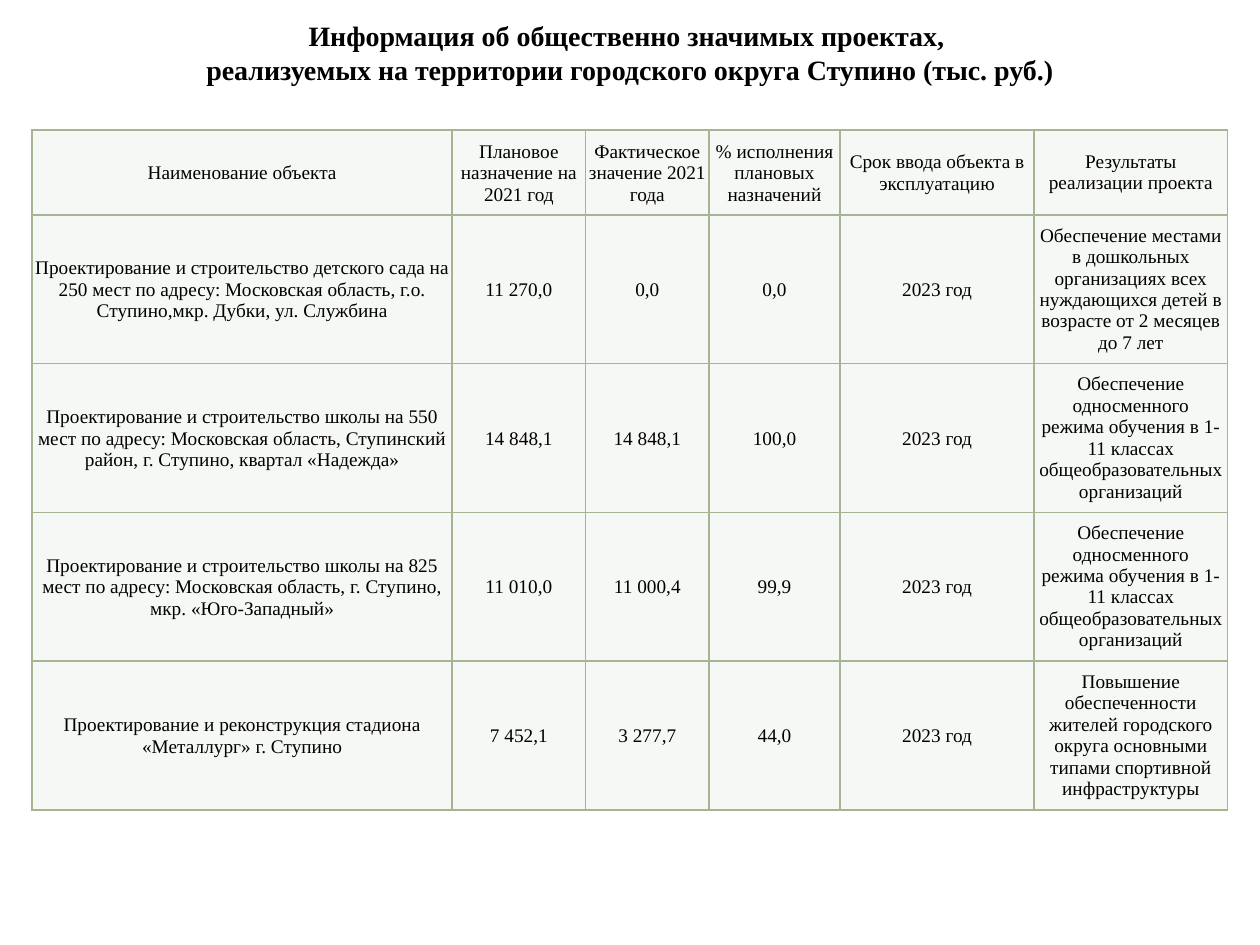
from lxml.etree import SubElement
from pptx import Presentation
from pptx.dml.color import RGBColor
from pptx.enum.text import MSO_ANCHOR as Anchor, MSO_AUTO_SIZE as AutoSize, PP_ALIGN as Align
from pptx.oxml.ns import qn
from pptx.util import Pt

FONT = "Times New Roman"
TITLE = [
    "Информация об общественно значимых проектах, ",
    "реализуемых на территории городского округа Ступино (тыс. руб.)",
]
SCHOOL_RESULT = "Обеспечение односменного режима обучения в 1-11 классах общеобразовательных организаций"
ROWS = [
    ("Наименование объекта", "Плановое назначение на 2021 год",
     "Фактическое значение 2021 года", "% исполнения плановых назначений",
     "Срок ввода объекта в эксплуатацию", "Результаты реализации проекта"),
    ("Проектирование и строительство детского сада на 250 мест по адресу: "
     "Московская область, г.о. Ступино,мкр. Дубки, ул. Службина",
     "11 270,0", "0,0", "0,0", "2023 год",
     "Обеспечение местами в дошкольных организациях всех нуждающихся детей "
     "в возрасте от 2 месяцев до 7 лет"),
    ("Проектирование и строительство школы на 550 мест по адресу: "
     "Московская область, Ступинский район, г. Ступино, квартал «Надежда»",
     "14 848,1", "14 848,1", "100,0", "2023 год", SCHOOL_RESULT),
    ("Проектирование и строительство школы на 825 мест по адресу: "
     "Московская область, г. Ступино, мкр. «Юго-Западный»",
     "11 010,0", "11 000,4", "99,9", "2023 год", SCHOOL_RESULT),
    ("Проектирование и реконструкция стадиона «Металлург» г. Ступино",
     "7 452,1", "3 277,7", "44,0", "2023 год",
     "Повышение обеспеченности жителей городского округа основными типами "
     "спортивной инфраструктуры"),
]
COLUMN_WIDTHS = [240, 76.3, 70.5, 74.9, 110.9, 110.5]
ROW_HEIGHTS = [48.4] + [85] * 4


def color(value):
    return RGBColor.from_string(value)


def format_para(para, size, bold=False):
    para.alignment = Align.CENTER
    para.font.name = FONT
    para.font.size = Pt(size)
    para.font.bold = bold
    para.font.color.rgb = color("000000")


def set_margins(target, left, top, right, bottom):
    target.margin_left, target.margin_top = Pt(left), Pt(top)
    target.margin_right, target.margin_bottom = Pt(right), Pt(bottom)


def add_title(page):
    title = page.shapes.title
    title.left, title.top, title.width, title.height = Pt(0), Pt(7.2), Pt(720), Pt(46)
    frame = title.text_frame
    frame.word_wrap = True
    frame.auto_size = AutoSize.NONE
    frame.vertical_anchor = Anchor.TOP
    set_margins(frame, 7.2, 3.6, 7.2, 3.6)
    frame.text = "\n".join(TITLE)
    for para in frame.paragraphs:
        format_para(para, 16, bold=True)


def add_borders(cell, value, width):
    properties = cell._tc.get_or_add_tcPr()
    for side in ("a:lnL", "a:lnR", "a:lnT", "a:lnB"):
        line = SubElement(properties, qn(side), w=str(Pt(width)))
        fill = SubElement(line, qn("a:solidFill"))
        SubElement(fill, qn("a:srgbClr"), val=value)


def fill_cell(cell, value, opacity):
    cell.fill.solid()
    cell.fill.fore_color.rgb = color(value)
    tint = cell._tc.tcPr.find(qn("a:solidFill")).find(qn("a:srgbClr"))
    SubElement(tint, qn("a:alpha"), val=str(opacity * 1000))


def format_cell(cell, text, margins):
    cell.text = text
    cell.vertical_anchor = Anchor.MIDDLE
    set_margins(cell, *margins)
    format_para(cell.text_frame.paragraphs[0], 11)
    add_borders(cell, "A5B592", 1)
    fill_cell(cell, "F0F3EE", 55)


def add_project_table(page):
    table = page.shapes.add_table(
        len(ROWS), len(COLUMN_WIDTHS), Pt(18.4), Pt(74.4),
        Pt(sum(COLUMN_WIDTHS)), Pt(sum(ROW_HEIGHTS))).table
    table.horz_banding = False
    table.first_row = False
    for column, width in zip(table.columns, COLUMN_WIDTHS):
        column.width = Pt(width)
    for row, height, texts in zip(table.rows, ROW_HEIGHTS, ROWS):
        row.height = Pt(height)
        for index, (cell, text) in enumerate(zip(row.cells, texts)):
            is_result = index == len(texts) - 1
            format_cell(cell, text, (2.9,) * 4 if is_result else (0.7, 0.7, 0.7, 0))


def main():
    deck = Presentation()
    deck.slide_width, deck.slide_height = Pt(720), Pt(540)
    page = deck.slides.add_slide(deck.slide_layouts[5])
    add_title(page)
    add_project_table(page)
    deck.save("out.pptx")


if __name__ == "__main__":
    main()
